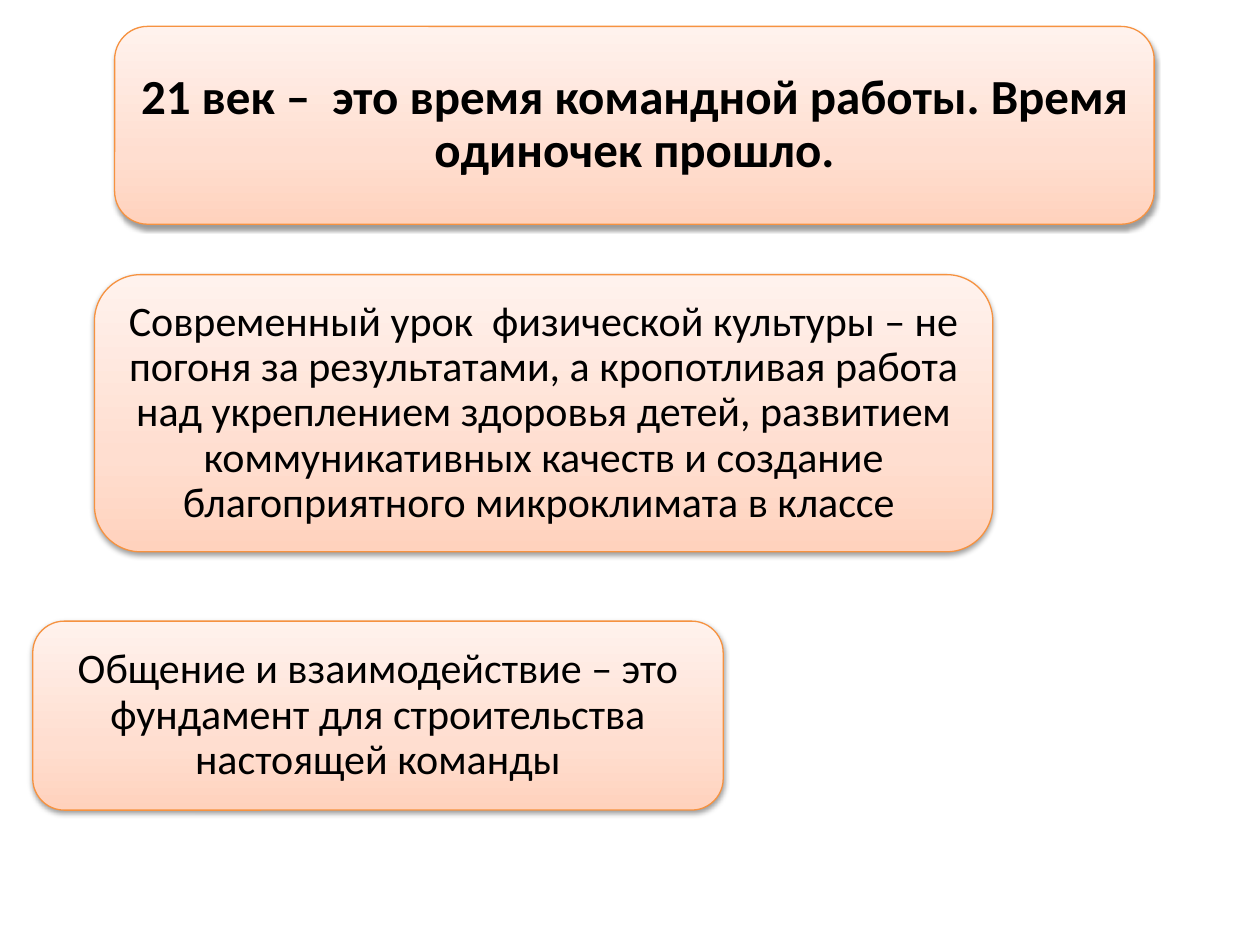
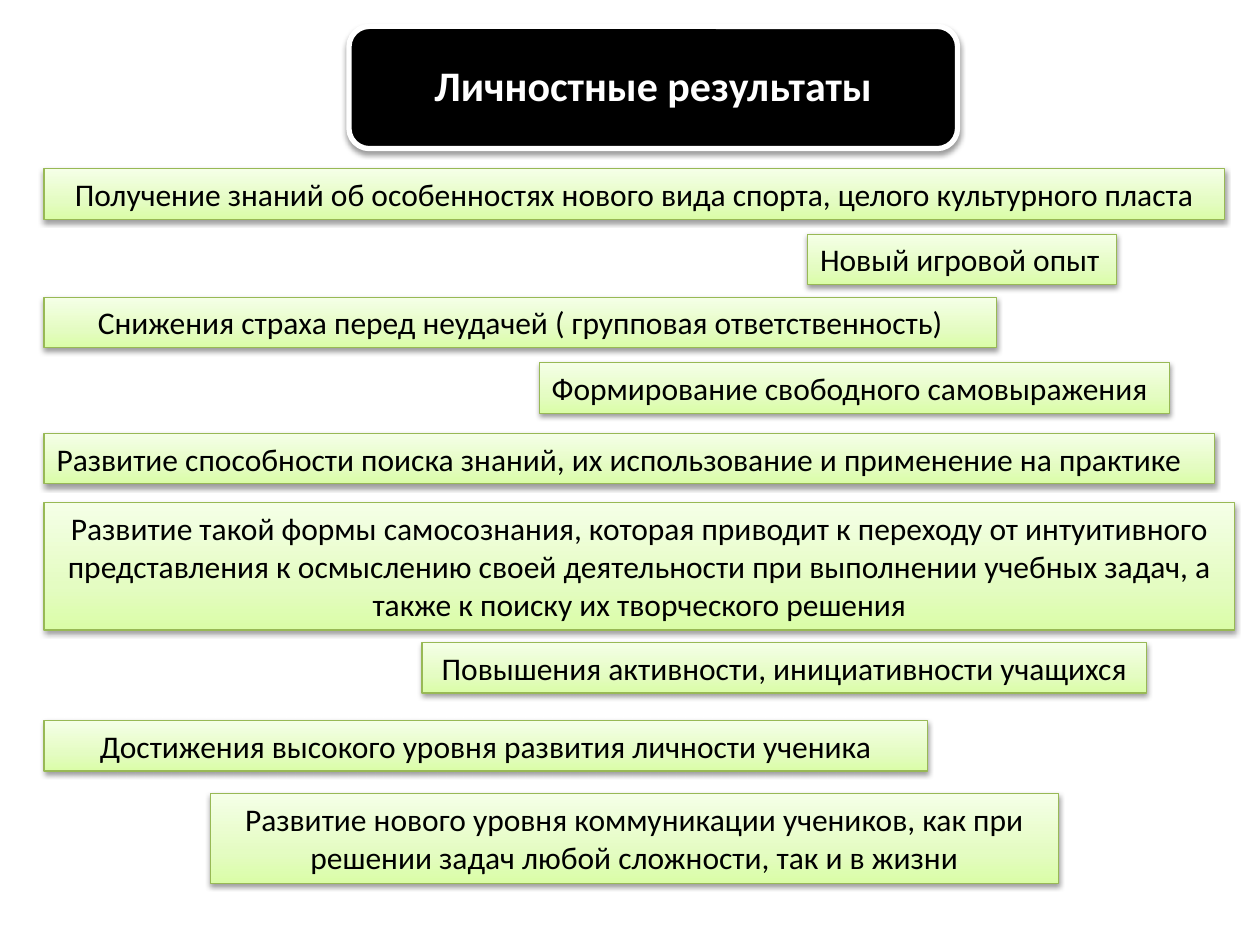
import pptx
import pptx.dml.color
import pptx.enum.shapes
import pptx.enum.text
import pptx.oxml.ns
import pptx.util
from lxml import etree
from pptx.util import Inches

# Shared style
FONT = "Calibri"
BLACK, WHITE = "000000", "FFFFFF"
PEACH, PEACH_LINE = [(0, "FFD2BD"), (35, "FFDED0"), (100, "FFF2ED")], "F69240"
GREEN, GREEN_LINE = [(0, "DAFDA7"), (35, "E4FCC2"), (100, "F5FFE7")], "98B955"
LEFT_EDGE = 0.35
BAR_HEIGHT = 0.4

ALIGN = pptx.enum.text.PP_ALIGN
SHAPE = pptx.enum.shapes.MSO_SHAPE
qn = pptx.oxml.ns.qn


def color(hex_string):
    return pptx.dml.color.RGBColor.from_string(hex_string)


def add_color(parent, hex_string):
    return etree.SubElement(parent, qn("a:srgbClr"), val=hex_string)


def write_text(shape, text, size=18, bold=False, font_color=BLACK,
               align=ALIGN.CENTER, line_spacing=None):
    paragraph = shape.text_frame.paragraphs[0]
    paragraph.alignment = align
    paragraph.line_spacing = line_spacing
    run = paragraph.add_run()
    run.text = text
    run.font.name = FONT
    run.font.size = pptx.util.Pt(size)
    run.font.bold = bold
    run.font.color.rgb = color(font_color)


class Deck:
    def __init__(self):
        self.presentation = pptx.Presentation()
        self.presentation.slide_width = Inches(10)
        self.presentation.slide_height = Inches(7.5)
        self.slide = None

    def add_slide(self):
        self.slide = self.presentation.slides.add_slide(self.presentation.slide_layouts[6])

    def fill_gradient(self, shape, stops):
        shape.fill.gradient()
        shape.fill.gradient_angle = 90
        stop_list = shape.element.spPr.find(qn("a:gradFill")).find(qn("a:gsLst"))
        for old_stop in list(stop_list):
            stop_list.remove(old_stop)
        for position, stop_color in stops:
            stop = etree.SubElement(stop_list, qn("a:gs"), pos=str(position * 1000))
            add_color(stop, stop_color)

    def add_shadow(self, shape):
        shape.shadow.inherit = False
        effects = shape.element.spPr.find(qn("a:effectLst"))
        shadow = etree.SubElement(
            effects, qn("a:outerShdw"), blurRad=str(pptx.util.Pt(3.1)),
            dist=str(pptx.util.Pt(1.6)), dir=str(90 * 60000), rotWithShape="0")
        etree.SubElement(add_color(shadow, BLACK), qn("a:alpha"), val="38000")

    def add_panel(self, kind, box, fill, line_color, line_width=0.75):
        """Shape with a shadow; fill is a hex string or a list of gradient stops."""
        shape = self.slide.shapes.add_shape(kind, *map(Inches, box))
        if isinstance(fill, str):
            shape.fill.solid()
            shape.fill.fore_color.rgb = color(fill)
        else:
            self.fill_gradient(shape, fill)
        shape.line.color.rgb = color(line_color)
        shape.line.width = pptx.util.Pt(line_width)
        self.add_shadow(shape)
        shape.text_frame.word_wrap = True
        return shape

    def add_card(self, box, text, margin=0.1, fill=PEACH, line_color=PEACH_LINE,
                 line_width=0.75, size=24, **text_format):
        card = self.add_panel(SHAPE.ROUNDED_RECTANGLE, box, fill, line_color, line_width)
        frame = card.text_frame
        frame.margin_left = frame.margin_right = Inches(margin)
        frame.margin_top = frame.margin_bottom = Inches(margin)
        frame.vertical_anchor = pptx.enum.text.MSO_ANCHOR.MIDDLE
        write_text(card, text, size=size, line_spacing=0.9, **text_format)

    def add_bar(self, box, text, align=ALIGN.CENTER, wrap=True):
        bar = self.add_panel(SHAPE.RECTANGLE, box, GREEN, GREEN_LINE)
        bar.text_frame.word_wrap = wrap
        bar.text_frame.vertical_anchor = pptx.enum.text.MSO_ANCHOR.TOP
        bar.text_frame.auto_size = pptx.enum.text.MSO_AUTO_SIZE.SHAPE_TO_FIT_TEXT
        write_text(bar, text, align=align)


def build_teamwork_slide(deck):
    deck.add_slide()
    deck.add_card((0.91, 0.21, 8.25, 1.57),
                  "21 век –  это время командной работы. Время одиночек прошло.",
                  margin=0.12, size=28, bold=True)
    deck.add_card((0.75, 2.18, 7.13, 2.2),
                  "Современный урок  физической культуры – не погоня за результатами, "
                  "а кропотливая работа над укреплением здоровья детей, развитием "
                  "коммуникативных качеств и создание благоприятного микроклимата в классе ")
    deck.add_card((0.26, 4.93, 5.48, 1.5),
                  "Общение и взаимодействие – это фундамент для строительства "
                  "настоящей команды")


def build_results_slide(deck):
    deck.add_slide()
    # Title
    deck.add_card((2.77, 0.21, 4.83, 0.97), "Личностные результаты", margin=0.08,
                  fill=BLACK, line_color=WHITE, line_width=3, bold=True, font_color=WHITE)
    # Results: left, top, width, height, text, format
    left_aligned = {"align": ALIGN.LEFT}
    results = [
        (LEFT_EDGE, 1.34, 9.37, BAR_HEIGHT,
         "Получение знаний об особенностях нового вида спорта, целого культурного пласта", {}),
        (6.41, 1.86, 2.45, BAR_HEIGHT, "Новый игровой опыт", {**left_aligned, "wrap": False}),
        (LEFT_EDGE, 2.36, 7.56, BAR_HEIGHT,
         "Снижения страха перед неудачей ( групповая ответственность)", {}),
        (4.28, 2.88, 5, BAR_HEIGHT, "Формирование свободного самовыражения", left_aligned),
        (LEFT_EDGE, 3.44, 9.29, BAR_HEIGHT,
         "Развитие способности поиска знаний, их использование и применение на практике",
         left_aligned),
        (LEFT_EDGE, 3.99, 9.45, 1.01,
         "Развитие такой формы самосознания, которая приводит к переходу от интуитивного "
         "представления к осмыслению своей деятельности при выполнении учебных задач, "
         "а также к поиску их творческого решения", {}),
        (3.35, 5.1, 5.75, BAR_HEIGHT, "Повышения активности, инициативности учащихся", {}),
        (LEFT_EDGE, 5.72, 7.01, BAR_HEIGHT,
         "Достижения высокого уровня развития личности ученика", {}),
        (1.67, 6.3, 6.73, 0.71,
         "Развитие нового уровня коммуникации учеников, как при решении задач "
         "любой сложности, так и в жизни", {}),
    ]
    for *box, text, text_format in results:
        deck.add_bar(box, text, **text_format)


def main():
    deck = Deck()
    build_teamwork_slide(deck)
    build_results_slide(deck)
    deck.presentation.save("out.pptx")


if __name__ == "__main__":
    main()
